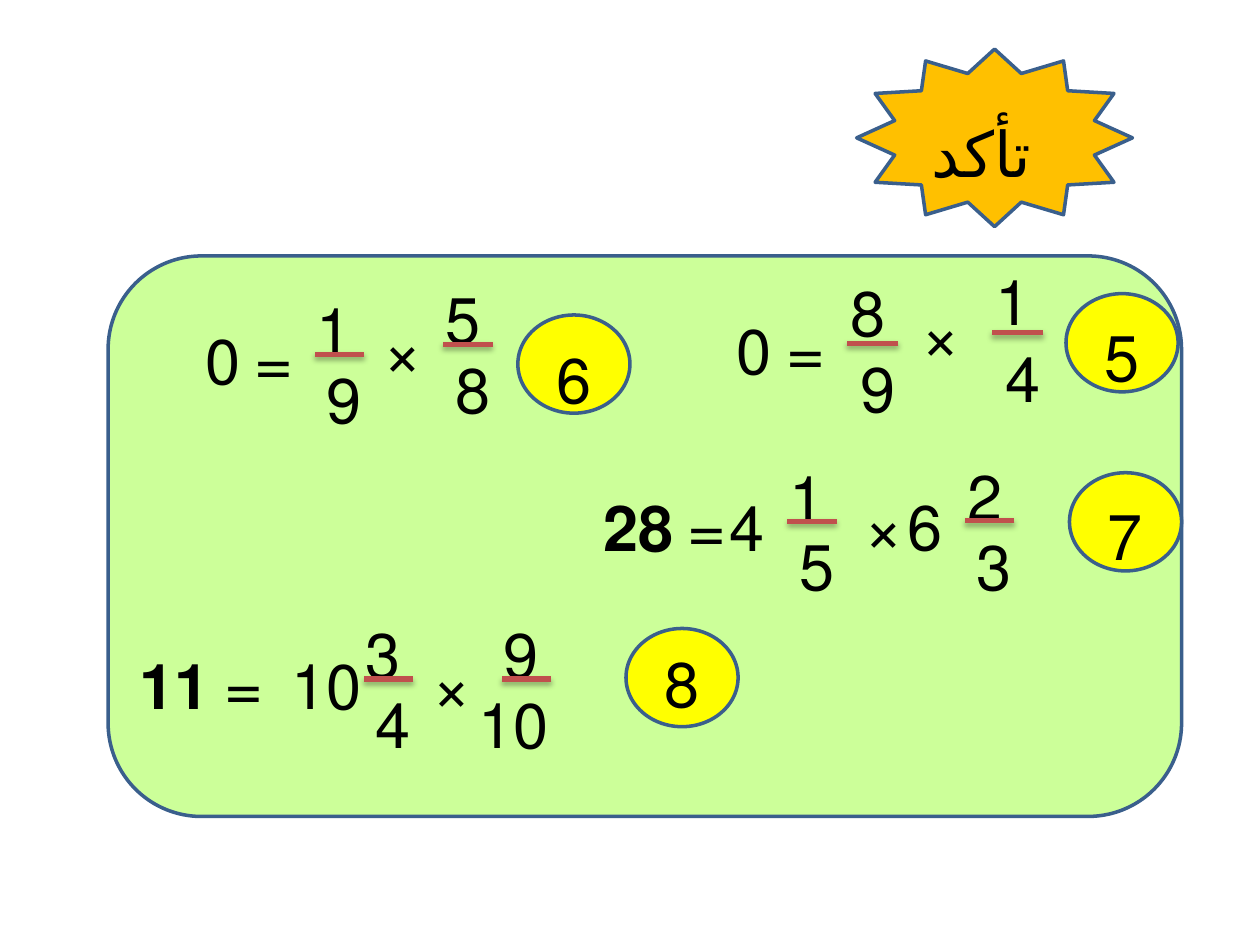
from lxml import etree
from pptx import Presentation
from pptx import util as u
from pptx.dml.color import RGBColor
from pptx.enum import lang, shapes, text
from pptx.oxml import ns

GREEN = RGBColor(0xCC, 0xFF, 0x99)
ORANGE = RGBColor(0xFF, 0xC0, 0x00)
YELLOW = RGBColor(0xFF, 0xFF, 0x00)
BLUE = RGBColor(0x3A, 0x5F, 0x8C)
RED = RGBColor(0xC0, 0x50, 0x4D)
BLACK = RGBColor(0, 0, 0)

BAR_SHADOW = (
    f'<a:effectLst {ns.nsdecls("a")}>'
    '<a:outerShdw blurRad="39370" dist="22860" dir="5400000" rotWithShape="0">'
    '<a:srgbClr val="000000"><a:alpha val="35000"/></a:srgbClr>'
    '</a:outerShdw></a:effectLst>'
)


def add_run(paragraph, content, *, size=36, font="Calibri", color=BLACK, bold=None):
    run = paragraph.add_run()
    run.text = content
    run.font.size = u.Pt(size)
    run.font.name = font
    run.font.color.rgb = color
    run.font.bold = bold
    run.font.language_id = lang.MSO_LANGUAGE_ID.ARABIC


class Worksheet:
    """Draws the exercise elements; all lengths are in centimetres."""

    text_height = 1.8
    badge_size = (2.26, 1.98)

    def __init__(self, slide):
        self.slide = slide

    def shape(self, kind, left, top, width, height, fill):
        shape = self.slide.shapes.add_shape(
            kind, u.Cm(left), u.Cm(top), u.Cm(width), u.Cm(height))
        shape.shadow.inherit = False
        shape.fill.solid()
        shape.fill.fore_color.rgb = fill
        shape.line.color.rgb = BLUE
        shape.line.width = u.Pt(2)

    def text(self, right, top, content, width=3.18, bold_end=""):
        """Right-to-left text, placed by the right edge of its box."""
        box = self.slide.shapes.add_textbox(
            u.Cm(right - width), u.Cm(top), u.Cm(width), u.Cm(self.text_height))
        box.text_frame.word_wrap = True
        box.text_frame.auto_size = text.MSO_AUTO_SIZE.SHAPE_TO_FIT_TEXT
        paragraph = box.text_frame.paragraphs[0]
        paragraph.alignment = text.PP_ALIGN.RIGHT
        paragraph._p.get_or_add_pPr().set("rtl", "1")
        add_run(paragraph, content)
        if bold_end:
            add_run(paragraph, bold_end, bold=True)

    def badge(self, left, top, number, drop=0.38):
        width, height = self.badge_size
        self.shape(shapes.MSO_SHAPE.OVAL, left, top, width, height, YELLOW)
        self.text(left + width - 0.53, top + drop, number, width)

    def fraction(self, right, middle, numerator, denominator, rise=1.4, bar=1.0):
        self.text(right, middle - rise, numerator)
        line = self.slide.shapes.add_connector(
            shapes.MSO_CONNECTOR.STRAIGHT, u.Cm(right), u.Cm(middle),
            u.Cm(right - bar), u.Cm(middle))
        line.line.color.rgb = RED
        line.line.width = u.Pt(3)
        line._element.spPr.append(etree.fromstring(BAR_SHADOW))
        self.text(right + 0.2, middle, denominator)


def main():
    presentation = Presentation()
    presentation.slide_width, presentation.slide_height = u.Cm(25.4), u.Cm(19.05)
    slide = presentation.slides.add_slide(presentation.slide_layouts[6])
    sheet = Worksheet(slide)

    # Panel and title star
    sheet.shape(shapes.MSO_SHAPE.FLOWCHART_ALTERNATE_PROCESS,
                2.18, 5.16, 21.64, 11.3, GREEN)
    sheet.shape(shapes.MSO_SHAPE.STAR_12_POINT, 17.27, 0.99, 5.56, 3.58, ORANGE)
    sheet.text(21.03, 2.18, "تأكد", 4.17)

    # Exercise 5
    sheet.badge(21.49, 5.92, "5")
    sheet.fraction(21.03, 6.71, "1", "4", rise=1.55, bar=1.04)
    sheet.text(19.58, 5.84, "× ")
    sheet.fraction(18.11, 6.93, "8", "9", rise=1.55, bar=1.04)
    sheet.text(16.87, 6.15, "= 0")

    # Exercise 6
    sheet.badge(10.44, 6.35, "6")
    sheet.fraction(9.93, 6.94, "5", "8")
    sheet.text(8.74, 6.15, "× ")
    sheet.fraction(7.34, 7.14, "1", "9")
    sheet.text(6.15, 6.35, "= 0")

    # Exercise 7
    sheet.badge(21.56, 9.53, "7")
    sheet.fraction(20.45, 10.5, "2", "3")
    sheet.text(19.25, 9.7, "6")
    sheet.text(18.44, 9.7, "×")
    sheet.fraction(16.87, 10.51, "1", "5")
    sheet.text(15.67, 9.73, "4")
    sheet.text(14.88, 9.73, "= ", 3.76, bold_end="28")

    # Exercise 8
    sheet.badge(12.62, 12.67, "8", drop=0.2)
    sheet.fraction(11.11, 13.69, "9", "10")
    sheet.text(9.73, 12.9, "×", 0.99)
    sheet.fraction(8.33, 13.69, "3", "4")
    sheet.text(7.54, 12.9, "10")
    sheet.text(5.54, 12.9, "= ", 3.76, bold_end="11")

    presentation.save("out.pptx")


if __name__ == "__main__":
    main()
